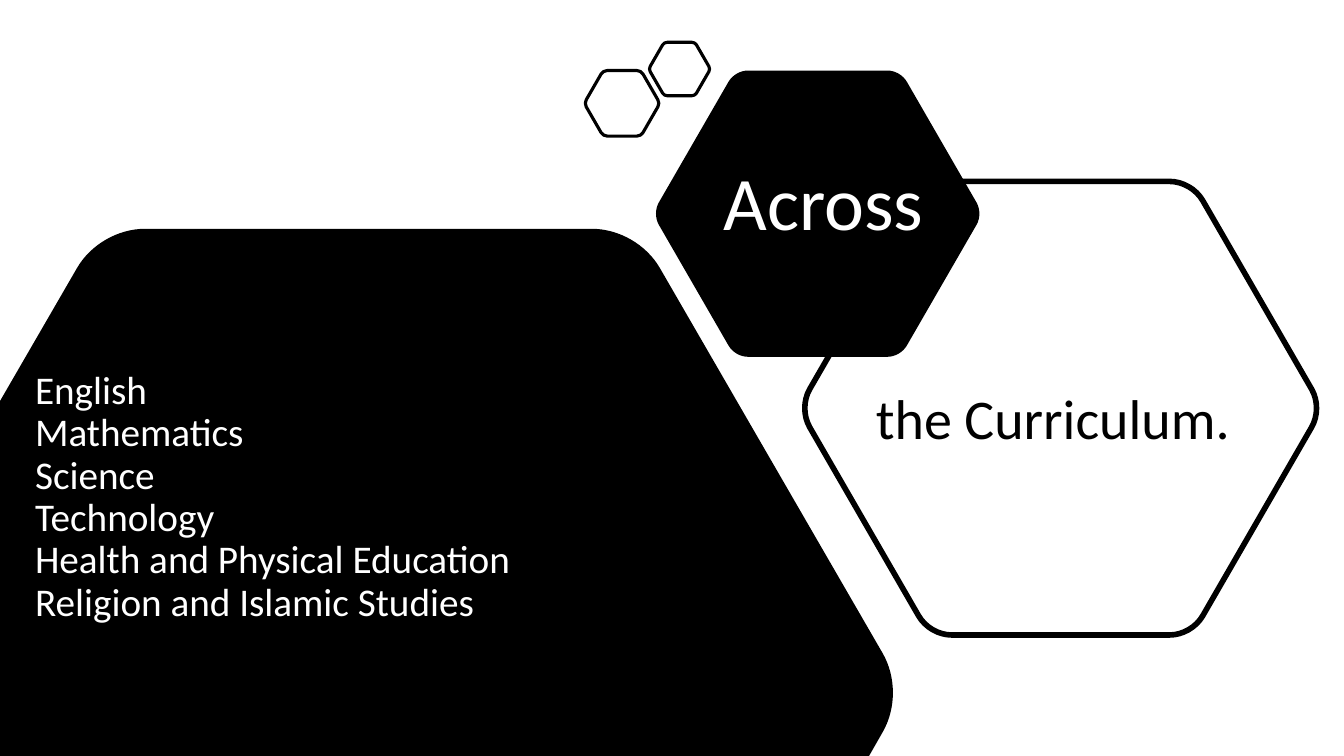
from math import cos, dist, pi, sin, sqrt

from pptx import Presentation
from pptx.dml.color import RGBColor
from pptx.enum.text import MSO_ANCHOR as Anchor
from pptx.oxml.ns import qn
from pptx.oxml.xmlchemy import OxmlElement as Element
from pptx.util import Pt

PX = 9144
SUBJECTS = [
    "English",
    "Mathematics",
    "Science",
    "Technology",
    "Health and Physical Education",
    "Religion and Islamic Studies",
]


def emu(px):
    return round(px * PX)


def color(value):
    return RGBColor.from_string(value)


def write(tf, text, size=28, fill="000000", font="Calibri", spacing=None):
    p = tf.paragraphs[0]
    p.line_spacing = spacing
    for i, line in enumerate(text.split("\n")):
        if i:
            p.add_line_break()
        r = p.add_run()
        r.text = line
        r.font.name = font
        r.font.size = Pt(size)
        r.font.color.rgb = color(fill)
    for props in p._p.iter(qn("a:br")):
        props.get_or_add_rPr().set("sz", str(size * 100)) if hasattr(
            props, "get_or_add_rPr") else props.append(Element("a:rPr"))
        props[0].set("sz", str(size * 100))


def toward(a, b, length):
    t = length / dist(a, b)
    return a[0] + (b[0] - a[0]) * t, a[1] + (b[1] - a[1]) * t


def round_corner(before, corner, after, inset):
    return [
        toward(corner, before, inset),
        toward(corner, before, inset * 0.4),
        toward(corner, after, inset * 0.4),
        toward(corner, after, inset),
    ]


def bend(sp, starts):
    lines = list(sp.element.iter(qn("a:lnTo")))
    for i in starts:
        curve = Element("a:cubicBezTo")
        lines[i].addprevious(curve)
        for line in lines[i:i + 3]:
            curve.append(line[0])
            line.getparent().remove(line)


class Deck:
    """Draws rounded polygons and text on one slide."""

    def __init__(self, width, height):
        self.prs = Presentation()
        self.prs.slide_width, self.prs.slide_height = emu(width), emu(height)
        self.s = self.prs.slides.add_slide(self.prs.slide_layouts[6])

    def polygon(self, corners, fill=None, line=None, group=None):
        points, starts = [], []
        for i, (x, y, inset) in enumerate(corners):
            if inset:
                before = corners[i - 1][:2]
                after = corners[(i + 1) % len(corners)][:2]
                starts.append(len(points))
                points += round_corner(before, (x, y), after, inset)
            else:
                points.append((x, y))
        points = [(emu(x), emu(y)) for x, y in points]
        shapes = (group or self.s).shapes
        builder = shapes.build_freeform(*points[0])
        builder.add_line_segments(points[1:], close=True)
        sp = builder.convert_to_shape()
        bend(sp, starts)
        sp.shadow.inherit = False
        if fill:
            sp.fill.solid()
            sp.fill.fore_color.rgb = color(fill)
        else:
            sp.fill.background()
        if line:
            sp.line.color.rgb = color("000000")
            sp.line.width = Pt(line)
        else:
            sp.line.fill.background()

    def hexagon(self, center, top, height, inset, **style):
        radius, middle = height / sqrt(3), top + height / 2
        angles = [k * pi / 3 for k in range(6)]
        self.polygon(
            [(center + radius * cos(a), middle + radius * sin(a), inset) for a in angles],
            **style,
        )

    def text(self, x, y, w, h, text, wrap=True, anchor=Anchor.TOP, top=5, **style):
        sp = self.s.shapes.add_textbox(emu(x), emu(y), emu(w), emu(h))
        tf = sp.text_frame
        tf.word_wrap = wrap
        tf.vertical_anchor = anchor
        tf.margin_top = emu(top)
        write(tf, text, **style)


def main():
    deck = Deck(1333, 750)
    deck.hexagon(1052, 180, 450, 22, line=4)
    deck.hexagon(811, 70, 284, 13, fill="000000")
    pair = deck.s.shapes.add_group_shape()
    deck.hexagon(617, 70, 65, 4, line=2.25, group=pair)
    deck.hexagon(674, 42, 53, 3, line=2.25, group=pair)
    panel = [(0, 398, 0), (99, 227, 45), (632, 227, 45),
             (898, 687, 45), (862, 750, 0), (0, 750, 0)]
    deck.polygon(panel, fill="000000")
    deck.text(25, 237, 670, 471, "\n".join(SUBJECTS), anchor=Anchor.MIDDLE,
              top=47, fill="FFFFFF", spacing=0.9)
    deck.text(859, 376, 386, 77, "the Curriculum.", size=40)
    deck.text(708, 149, 221, 101, "Across", wrap=False, size=54, fill="FFFFFF")
    deck.prs.save("out.pptx")


if __name__ == "__main__":
    main()
